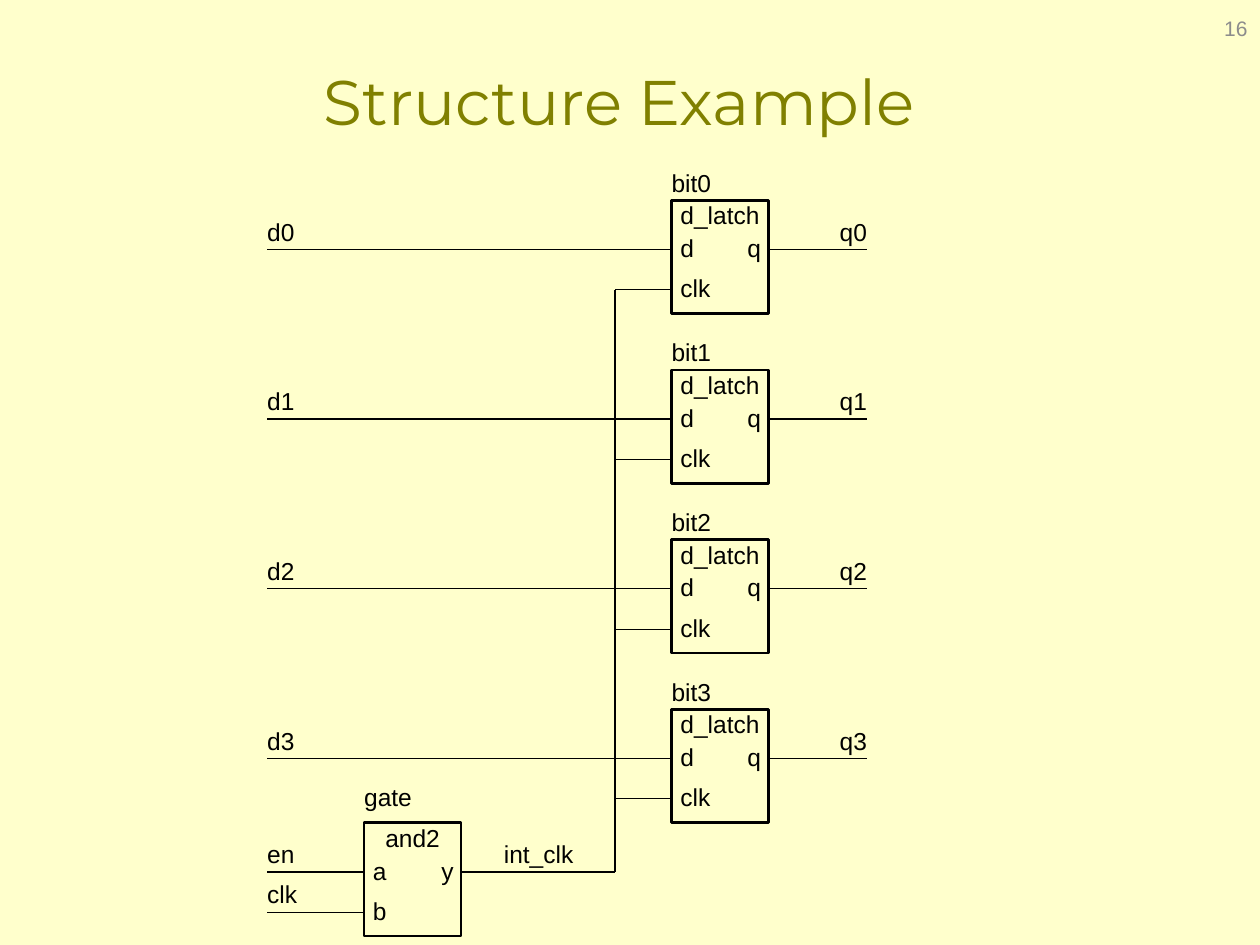
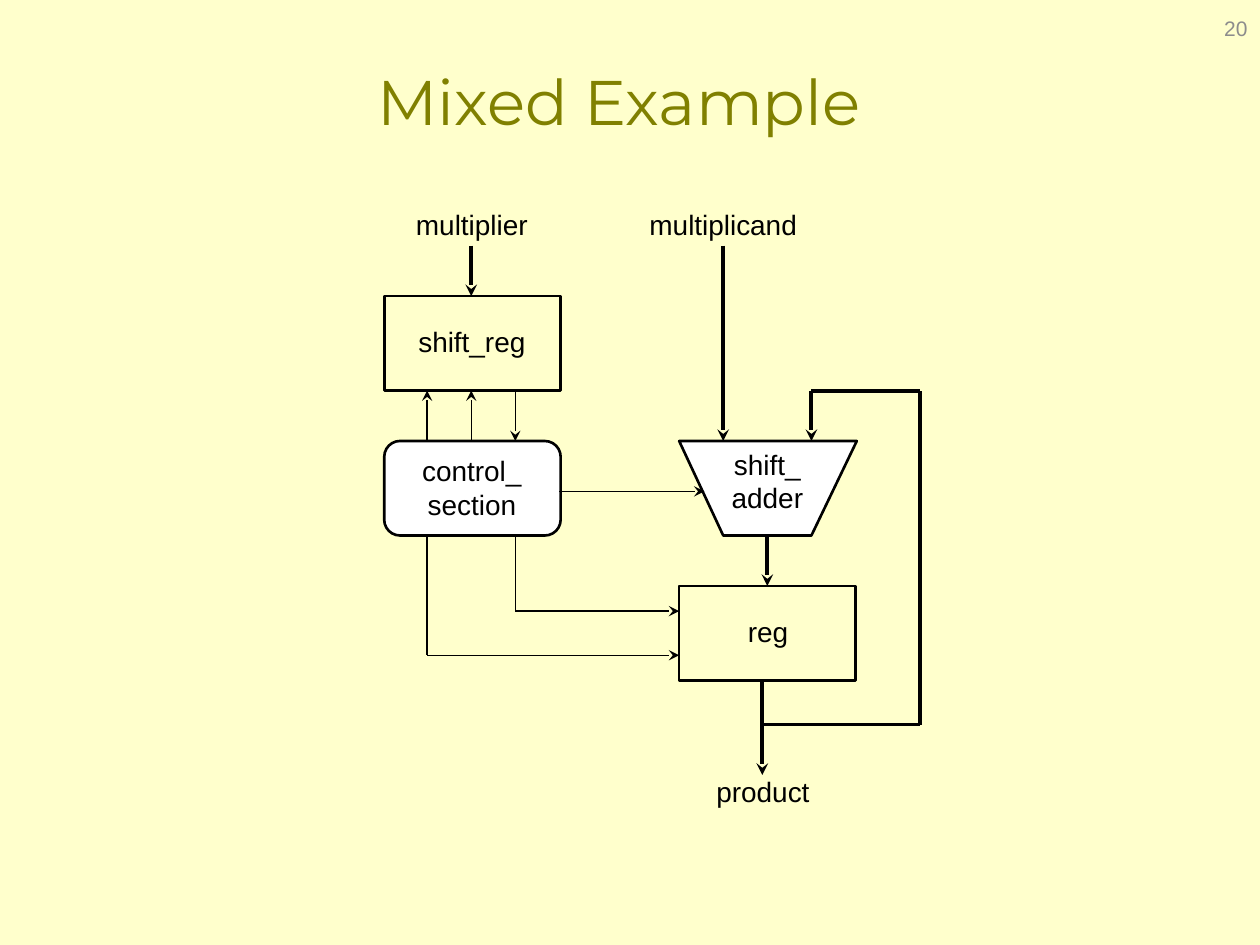
import pptx
import pptx.util
import pptx.dml.color
import pptx.enum.shapes
import pptx.enum.text
import pptx.oxml.ns
from dataclasses import dataclass
from lxml import etree

Inches = pptx.util.Inches
Kind = pptx.enum.shapes.MSO_SHAPE
Align = pptx.enum.text.PP_ALIGN
Anchor = pptx.enum.text.MSO_ANCHOR


@dataclass(frozen=True)
class Theme:
    ground: str = "FFFFCC"
    title: str = "808000"
    ink: str = "000000"
    paper: str = "FFFFFF"
    muted: str = "8C8C8C"
    head: str = "Montserrat"
    body: str = "Arial"
    big: int = 36
    mid: int = 16
    pin: int = 14
    small: int = 12
    thin: float = 0.75
    edge: float = 1.5
    bus: float = 2.25


T = Theme()

# Structure slide: a column of latches and the gate that clocks them
BITS = 4
LATCH = ("d_latch", ("d", "clk"), "q")
GATE = ("and2", ("a", "b"), "y")
LATCH_X, TOP, LAST = 5.33, 1.59, 5.63
GATE_X, GATE_Y = 2.89, 6.53
BOX_W, BOX_H = 0.77, 0.9
ROW = 0.26
PINS = (0.39, 0.71)
STUB = 0.19
LEFT, RIGHT, TRUNK = 2.12, 6.88, 4.88

# Mixed slide: blocks share one size, wires are lists of corners
W, H = 1.4, 0.75
BLOCKS = [
    # kind, left, top, fill
    (Kind.RECTANGLE, 3.05, 2.35, None),
    (Kind.RECTANGLE, 5.39, 4.65, None),
    (Kind.ROUNDED_RECTANGLE, 3.05, 3.5, T.paper),
]
FUNNEL = [(5.39, 3.5), (5.74, 4.25), (6.44, 4.25), (6.8, 3.5)]
WORDS = [
    # text, left, top, width, fill
    ("shift_reg", 3.19, 2.58, 1.11, None),
    ("reg", 5.54, 4.88, 1.11, None),
    ("shift_\nadder", 5.73, 3.55, 0.72, T.paper),
    ("control_\nsection", 3.19, 3.6, 1.11, T.paper),
    ("multiplier", 3.24, 1.65, 1.01, None),
    ("multiplicand", 5.14, 1.65, 1.2, None),
    ("product", 5.55, 6.15, 1.01, None),
]
BUSES = [
    [(3.74, 1.95), (3.74, 2.35)],
    [(5.74, 1.95), (5.74, 3.5)],
    [(6.09, 4.25), (6.09, 4.65)],
    [(6.05, 5.4), (6.05, 6.15)],
    [(6.05, 5.75), (7.3, 5.75), (7.3, 3.1), (6.44, 3.1), (6.44, 3.5)],
]
SIGNALS = [
    [(3.39, 3.5), (3.39, 3.1)],
    [(3.74, 3.5), (3.74, 3.1)],
    [(4.09, 3.1), (4.09, 3.5)],
    [(4.44, 3.9), (5.59, 3.9)],
    [(4.09, 4.25), (4.09, 4.85), (5.39, 4.85)],
    [(3.39, 4.25), (3.39, 5.2), (5.39, 5.2)],
]


def rgb(code):
    return pptx.dml.color.RGBColor.from_string(code)


def paint(fill, code):
    if code:
        fill.solid()
        fill.fore_color.rgb = rgb(code)
    else:
        fill.background()


def write(slide, text, x, y, w, h, size=T.pin, align=Align.LEFT, color=T.ink,
          font=T.body, fill=None, wrap=True, inset=False):
    """Add a text box; inset ones keep their margins and centre vertically."""
    box = slide.shapes.add_textbox(*map(Inches, (x, y, w, h)))
    paint(box.fill, fill)
    frame = box.text_frame
    frame.word_wrap = wrap
    if inset:
        frame.vertical_anchor = Anchor.MIDDLE
    else:
        frame.margin_left = frame.margin_right = 0
        frame.margin_top = frame.margin_bottom = 0
    frame.text = text
    for para in frame.paragraphs:
        para.alignment = align
        para.font.size = pptx.util.Pt(size)
        para.font.name = font
        para.font.color.rgb = rgb(color)


def style(shape, fill=None):
    shape.shadow.inherit = False
    paint(shape.fill, fill)
    shape.line.color.rgb = rgb(T.ink)
    shape.line.width = pptx.util.Pt(T.edge)


def draw(slide, kind, x, y, w, h, fill=None):
    shape = slide.shapes.add_shape(kind, *map(Inches, (x, y, w, h)))
    style(shape, fill)


def wire(slide, points, width=T.thin, arrow=False):
    """Join the points with straight lines, with an optional final arrow."""
    qn = pptx.oxml.ns.qn
    for start, end in zip(points, points[1:]):
        line = slide.shapes.add_connector(
            pptx.enum.shapes.MSO_CONNECTOR.STRAIGHT,
            *map(Inches, start + end))
        line.line.color.rgb = rgb(T.ink)
        line.line.width = pptx.util.Pt(width)
        props = line._element.spPr
        if arrow and end == points[-1]:
            etree.SubElement(props.find(qn("a:ln")), qn("a:tailEnd"),
                             type="stealth")
        etree.SubElement(props, qn("a:effectLst"))


def page(deck, title, number):
    slide = deck.slides.add_slide(deck.slide_layouts[6])
    paint(slide.background.fill, T.ground)
    write(slide, title, 0.58, 0.17, 8.67, 1.25, T.big, Align.CENTER,
          T.title, T.head, inset=True)
    write(slide, str(number), 7.67, 0.02, 2.33, 0.4, T.small, Align.RIGHT,
          T.muted, inset=True)
    return slide


def block(slide, part, x, y):
    """Draw a part with its pin names and a short stub at each pin."""
    name, ins, out = part
    end = x + BOX_W
    draw(slide, Kind.RECTANGLE, x, y, BOX_W, BOX_H)
    write(slide, name, x, y, BOX_W, ROW, align=Align.CENTER)
    for pin, drop in zip(ins, PINS):
        write(slide, pin, x + 0.07, y + drop - ROW / 2, ROW, ROW)
        wire(slide, [(x, y + drop), (x - STUB, y + drop)])
    mid = y + PINS[0]
    write(slide, out, end - 0.06 - ROW, mid - ROW / 2, ROW, ROW,
          align=Align.RIGHT)
    wire(slide, [(end + STUB, mid), (end, mid)])


def port(slide, name, y, x, edge, align=Align.LEFT):
    """Name an outside signal and run its wire from the edge to x."""
    left = edge if align == Align.LEFT else edge - 0.39
    write(slide, name, left, y - ROW, 0.39, ROW, align=align)
    wire(slide, [(x, y), (edge, y)])


def structure(deck):
    slide = page(deck, "Structure Example", 16)
    pitch = (LAST - TOP) / (BITS - 1)
    data, clock = PINS
    for i in range(BITS):
        y = TOP + i * pitch
        block(slide, LATCH, LATCH_X, y)
        write(slide, f"bit{i}", LATCH_X, y - ROW, 0.39, ROW)
        port(slide, f"d{i}", y + data, LATCH_X - STUB, LEFT)
        port(slide, f"q{i}", y + data, LATCH_X + BOX_W + STUB, RIGHT,
             Align.RIGHT)
        wire(slide, [(LATCH_X - STUB, y + clock), (TRUNK, y + clock)])

    block(slide, GATE, GATE_X, GATE_Y)
    write(slide, "gate", GATE_X, GATE_Y - 0.32, 0.71, 0.32, wrap=False)
    for name, drop in zip(("en", "clk"), PINS):
        port(slide, name, GATE_Y + drop, GATE_X - STUB, LEFT)
    out = GATE_Y + data
    write(slide, "int_clk", 3.92, out - ROW, 0.71, ROW, align=Align.CENTER)
    wire(slide, [(GATE_X + BOX_W + STUB, out), (TRUNK, out),
                 (TRUNK, TOP + clock)])


def mixed(deck):
    slide = page(deck, "Mixed Example", 20)
    for kind, x, y, fill in BLOCKS:
        draw(slide, kind, x, y, W, H, fill)
    first, *rest = [tuple(map(Inches, spot)) for spot in FUNNEL]
    path = slide.shapes.build_freeform(*first)
    path.add_line_segments(rest, close=True)
    style(path.convert_to_shape(), T.paper)
    for text, x, y, w, fill in WORDS:
        rows = text.count("\n") + 1
        write(slide, text, x, y, w, 0.3 * rows, T.mid, Align.CENTER,
              fill=fill)
    for points in BUSES:
        wire(slide, points, T.bus, True)
    for points in SIGNALS:
        wire(slide, points, T.thin, True)


def main():
    deck = pptx.Presentation()
    deck.slide_width, deck.slide_height = Inches(10), Inches(7.5)
    structure(deck)
    mixed(deck)
    deck.save("out.pptx")


if __name__ == "__main__":
    main()
